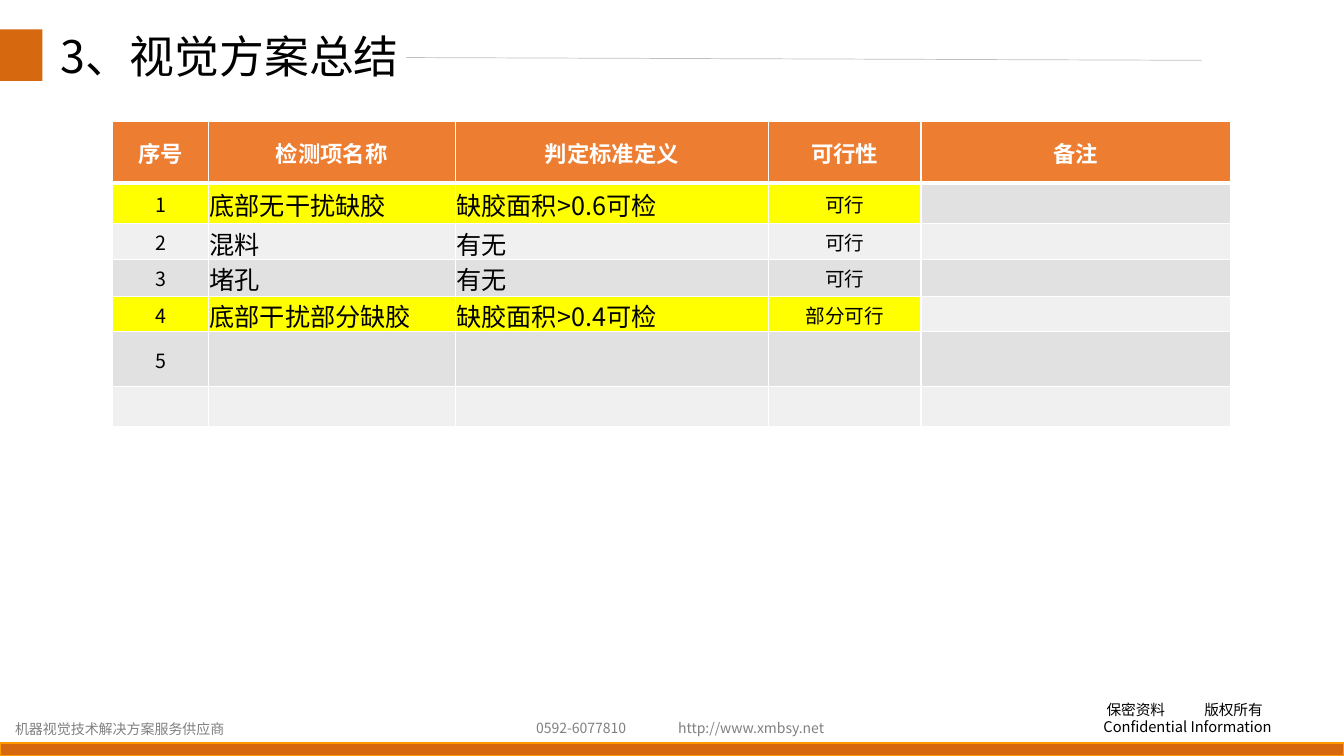
from lxml import etree
from pptx import Presentation
from pptx import util as u
from pptx.dml.color import RGBColor
from pptx.enum import shapes, text
from pptx.oxml.ns import qn

FONT = "Noto Sans CJK SC"


def color(hex_code):
    return RGBColor.from_string(hex_code)


class SlideBuilder:
    accent, header, highlight = "D6680F", "ED7D31", "FFFF00"
    bands = ("E1E1E1", "F0F0F0")

    def __init__(self, slide):
        self.slide = slide

    def style(self, paragraph, size, hex_code="000000", bold=False):
        for run in paragraph.runs:
            run.font.size = u.Pt(size)
            run.font.name = FONT
            run.font.bold = bold
            run.font.color.rgb = color(hex_code)
            east_asian = etree.SubElement(run.font._element, qn("a:ea"))
            east_asian.set("typeface", FONT)

    def bar(self, left, top, width, height, outline=None):
        bar = self.slide.shapes.add_shape(
            shapes.MSO_SHAPE.RECTANGLE, u.Cm(left), u.Cm(top), u.Cm(width), u.Cm(height))
        bar.shadow.inherit = False
        bar.fill.solid()
        bar.fill.fore_color.rgb = color(self.accent)
        if outline:
            bar.line.color.rgb = color(outline)
            bar.line.width = u.Pt(1)
        else:
            bar.line.fill.background()

    def rule(self, x1, y1, x2, y2):
        rule = self.slide.shapes.add_connector(
            shapes.MSO_CONNECTOR.STRAIGHT, u.Cm(x1), u.Cm(y1), u.Cm(x2), u.Cm(y2))
        rule.line.color.rgb = color("BFBFBF")
        rule.line.width = u.Pt(0.5)
        etree.SubElement(rule._element.spPr, qn("a:effectLst"))

    def label(self, left, top, width, height, words, size, hex_code="000000"):
        frame = self.slide.shapes.add_textbox(
            u.Cm(left), u.Cm(top), u.Cm(width), u.Cm(height)).text_frame
        frame.word_wrap = True
        frame.text = words
        for paragraph in frame.paragraphs:
            self.style(paragraph, size, hex_code)
        return frame

    def tab_stop(self, paragraph, indent, position):
        properties = paragraph._p.get_or_add_pPr()
        properties.set("indent", str(u.Cm(indent)))
        stops = etree.SubElement(properties, qn("a:tabLst"))
        etree.SubElement(stops, qn("a:tab"), pos=str(u.Cm(position)), algn="l")

    def borders(self, cell, bottom):
        properties = cell._tc.get_or_add_tcPr()
        for index, side in enumerate(("lnL", "lnR", "lnT", "lnB")):
            width = bottom if side == "lnB" else 1
            line = etree.Element(qn(f"a:{side}"), w=str(u.Pt(width)))
            fill = etree.SubElement(line, qn("a:solidFill"))
            etree.SubElement(fill, qn("a:srgbClr"), val="FFFFFF")
            properties.insert(index, line)

    def header_cell(self, cell):
        title = cell.text_frame.paragraphs[0]
        title.alignment = text.PP_ALIGN.CENTER
        title.line_spacing = 1.3
        self.style(title, 16, "FFFFFF", True)

    def body_cell(self, cell, centered):
        cell.vertical_anchor = text.MSO_ANCHOR.MIDDLE
        cell.margin_left = cell.margin_right = cell.margin_top = u.Cm(0.03)
        cell.margin_bottom = 0
        entry = cell.text_frame.paragraphs[0]
        if centered:
            entry.alignment = text.PP_ALIGN.CENTER
        if not entry.runs:
            entry._p.get_or_add_endParaRPr().set("sz", "1400")
        self.style(entry, 14 if centered else 18)

    def table(self, left, top, widths, heights, rows, highlighted):
        table = self.slide.shapes.add_table(
            len(rows), len(widths), u.Cm(left), u.Cm(top),
            u.Cm(sum(widths)), u.Cm(sum(heights))).table
        for column, width in zip(table.columns, widths):
            column.width = u.Cm(width)
        for row, height in zip(table.rows, heights):
            row.height = u.Cm(height)
        for r, values in enumerate(rows):
            for c, value in enumerate(values):
                cell = table.cell(r, c)
                cell.text_frame.text = value
                fill = self.bands[(r - 1) % 2]
                if r == 0:
                    fill = self.header
                    self.header_cell(cell)
                else:
                    self.body_cell(cell, c in (0, 3))
                    if r in highlighted and c < len(widths) - 1:
                        fill = self.highlight
                cell.fill.solid()
                cell.fill.fore_color.rgb = color(fill)
                self.borders(cell, 3 if r == 0 else 1)


def main():
    deck = Presentation()
    deck.slide_width, deck.slide_height = u.Cm(33.87), u.Cm(19.05)
    page = SlideBuilder(deck.slides.add_slide(deck.slide_layouts[6]))

    page.bar(0, 18.72, 33.87, 0.33, "FF9900")
    notice = page.label(27.56, 17.53, 5.51, 1.14,
                        "保密资料\t版权所有\nConfidential Information", 10.5)
    page.tab_stop(notice.paragraphs[0], 0.08, 2.07)
    for left, top, width, contact in (
            (16.84, 18.01, 4.24, "http://www.xmbsy.net"),
            (13.26, 18.01, 3.05, "0592-6077810"),
            (0.13, 18.03, 5.97, "机器视觉技术解决方案服务供应商")):
        page.label(left, top, width, 0.69, contact, 10, "808080")

    page.rule(10.24, 1.45, 30.28, 1.52)
    page.bar(0, 0.74, 1.07, 1.3)
    heading = page.label(1.27, 0.74, 10.11, 1.8, "3、视觉方案总结", 32)
    heading.paragraphs[0].line_spacing = 0.9

    page.table(
        2.84, 3.07, (2.41, 6.22, 7.9, 3.84, 7.8),
        (1.55, 1.02, 0.89, 0.94, 0.89, 1.37, 1.02),
        (("序号", "检测项名称", "判定标准定义", "可行性", "备注"),
         ("1", "底部无干扰缺胶", "缺胶面积>0.6可检", "可行", ""),
         ("2", "混料", "有无", "可行", ""),
         ("3", "堵孔", "有无", "可行", ""),
         ("4", "底部干扰部分缺胶", "缺胶面积>0.4可检", "部分可行", ""),
         ("5", "", "", "", ""),
         ("", "", "", "", "")),
        highlighted=(1, 4))
    deck.save("out.pptx")


if __name__ == "__main__":
    main()
